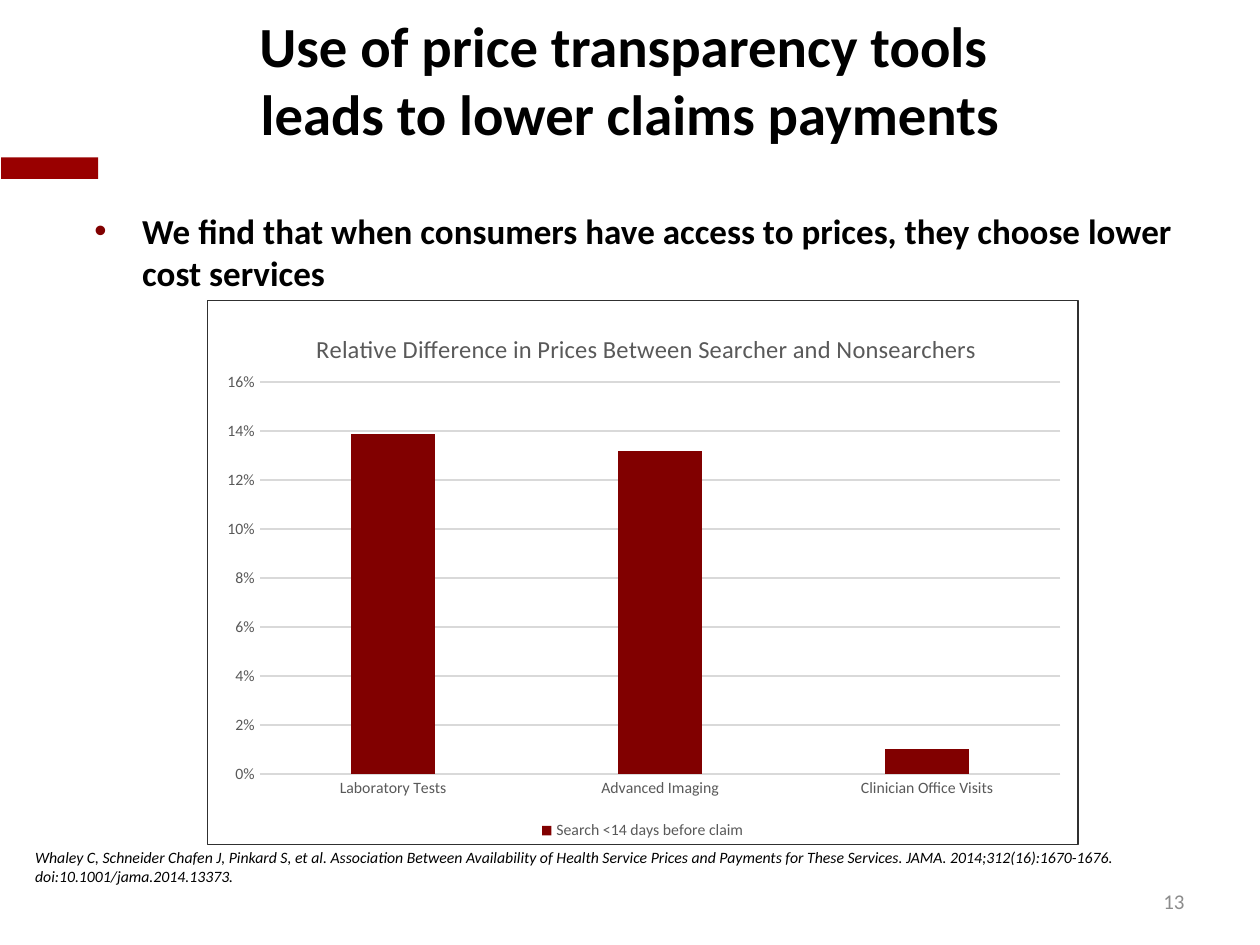
from lxml import etree
from pptx import Presentation
from pptx.chart.data import CategoryChartData
from pptx.dml.color import RGBColor
from pptx.enum.chart import XL_CHART_TYPE as ChartType, XL_LEGEND_POSITION as LegendPosition, XL_TICK_MARK as TickMark
from pptx.enum.shapes import MSO_SHAPE as Shape
from pptx.enum.text import MSO_ANCHOR as Anchor, PP_ALIGN as Align
from pptx.oxml import parse_xml
from pptx.oxml.ns import nsdecls, qn
from pptx.util import Inches, Pt

COLORS = {"accent": "990000", "bar": "810000", "text": "000000", "number": "8C8C8C",
          "label": "595959", "grid": "D9D9D9", "border": "303030"}
FONT = "Calibri"


def style_font(font, size, color, bold=False, italic=False):
    font.name, font.size, font.bold, font.italic = FONT, Pt(size), bold, italic
    font.color.rgb = RGBColor.from_string(COLORS[color])


def add_text(text, left, top, width, height, size, color="text", bold=False, italic=False,
             align=Align.LEFT, anchor=Anchor.TOP, bullet=None):
    box = slide.shapes.add_textbox(Inches(left), Inches(top), Inches(width), Inches(height))
    frame = box.text_frame
    frame.word_wrap = True
    frame.vertical_anchor = anchor
    frame.text = text
    paragraph = frame.paragraphs[0]
    paragraph.alignment = align
    if bullet:
        properties = paragraph._p.get_or_add_pPr()
        properties.set("marL", str(Inches(0.38)))
        properties.set("indent", str(Inches(-0.38)))
        bullet_color = etree.SubElement(properties, qn("a:buClr"))
        etree.SubElement(bullet_color, qn("a:srgbClr"), val=COLORS["bar"])
        etree.SubElement(properties, qn("a:buFont"), typeface="Arial")
        etree.SubElement(properties, qn("a:buChar"), char=bullet)
    for run in paragraph.runs:
        style_font(run.font, size, color, bold, italic)


prs = Presentation()
prs.slide_width, prs.slide_height = Inches(10), Inches(7.5)
slide = prs.slides.add_slide(prs.slide_layouts[6])

accent = slide.shapes.add_shape(Shape.RECTANGLE, Inches(0.01), Inches(1.25), Inches(0.77), Inches(0.17))
accent.shadow.inherit = False
accent.fill.solid()
accent.fill.fore_color.rgb = RGBColor.from_string(COLORS["accent"])
accent.line.fill.background()

add_text("Use of price transparency tools \vleads to lower claims payments", 0, 0, 10, 1.25, 32.4,
         bold=True, align=Align.CENTER, anchor=Anchor.MIDDLE)
add_text("13", 7.17, 6.95, 2.33, 0.4, 12, color="number", align=Align.RIGHT, anchor=Anchor.MIDDLE)

prices = CategoryChartData(number_format="0%")
prices.categories = ["Laboratory Tests", "Advanced Imaging", "Clinician Office Visits"]
prices.add_series("Search <14 days before claim", [0.139, 0.132, 0.01])
chart = slide.shapes.add_chart(ChartType.COLUMN_CLUSTERED, Inches(1.64), Inches(2.38),
                               Inches(6.92), Inches(4.33), prices).chart
style_font(chart.font, 10, "text")

chart.has_title = True
chart_title = chart.chart_title
chart_title.include_in_layout = False
chart_title.text_frame.text = "Relative Difference in Prices Between Searcher and Nonsearchers"
style_font(chart_title.text_frame.paragraphs[0].runs[0].font, 14, "label")

chart.has_legend = True
chart.legend.position = LegendPosition.BOTTOM
chart.legend.include_in_layout = False
style_font(chart.legend.font, 9, "label")

categories, values = chart.category_axis, chart.value_axis
for axis in (categories, values):
    axis.major_tick_mark = axis.minor_tick_mark = TickMark.NONE
    style_font(axis.tick_labels.font, 9, "label")
values.minimum_scale, values.maximum_scale, values.major_unit = 0, 0.16, 0.02
values.tick_labels.number_format = "0%"
values.tick_labels.number_format_is_linked = False
values.format.line.fill.background()
for line in (categories.format.line, values.major_gridlines.format.line):
    line.color.rgb = RGBColor.from_string(COLORS["grid"])
    line.width = Pt(0.75)

columns = chart.plots[0]
columns.gap_width, columns.overlap = 219, -27
columns.vary_by_categories = False
columns.series[0].format.fill.solid()
columns.series[0].format.fill.fore_color.rgb = RGBColor.from_string(COLORS["bar"])

plot_area = chart.element.find(".//" + qn("c:plotArea"))
for old_layout in plot_area.findall(qn("c:layout")):
    plot_area.remove(old_layout)
plot_area.insert(0, parse_xml(
    f'<c:layout {nsdecls("c")}><c:manualLayout><c:layoutTarget val="inner"/>'
    '<c:xMode val="edge"/><c:yMode val="edge"/><c:x val="0.06"/><c:y val="0.15"/>'
    '<c:w val="0.92"/><c:h val="0.72"/></c:manualLayout></c:layout>'))
title_element = chart_title._element
for old_layout in title_element.findall(qn("c:layout")):
    title_element.remove(old_layout)
title_element.find(qn("c:tx")).addnext(parse_xml(
    f'<c:layout {nsdecls("c")}><c:manualLayout><c:xMode val="edge"/><c:yMode val="edge"/>'
    '<c:x val="0.12"/><c:y val="0.05"/></c:manualLayout></c:layout>'))
chart.element.find(qn("c:chart")).addnext(parse_xml(
    f'<c:spPr {nsdecls("c", "a")}><a:noFill/><a:ln w="{Pt(0.75)}"><a:solidFill>'
    f'<a:srgbClr val="{COLORS["border"]}"/></a:solidFill></a:ln></c:spPr>'))

add_text("We find that when consumers have access to prices, they choose lower cost services",
         0.65, 1.61, 8.85, 0.77, 20, bold=True, bullet="•")
add_text("Whaley C, Schneider Chafen J, Pinkard S, et al. Association Between Availability of Health "
         "Service Prices and Payments for These Services. JAMA. 2014;312(16):1670-1676. "
         "doi:10.1001/jama.2014.13373.", 0.18, 6.68, 9.82, 0.4, 9, italic=True)

prs.save("out.pptx")
